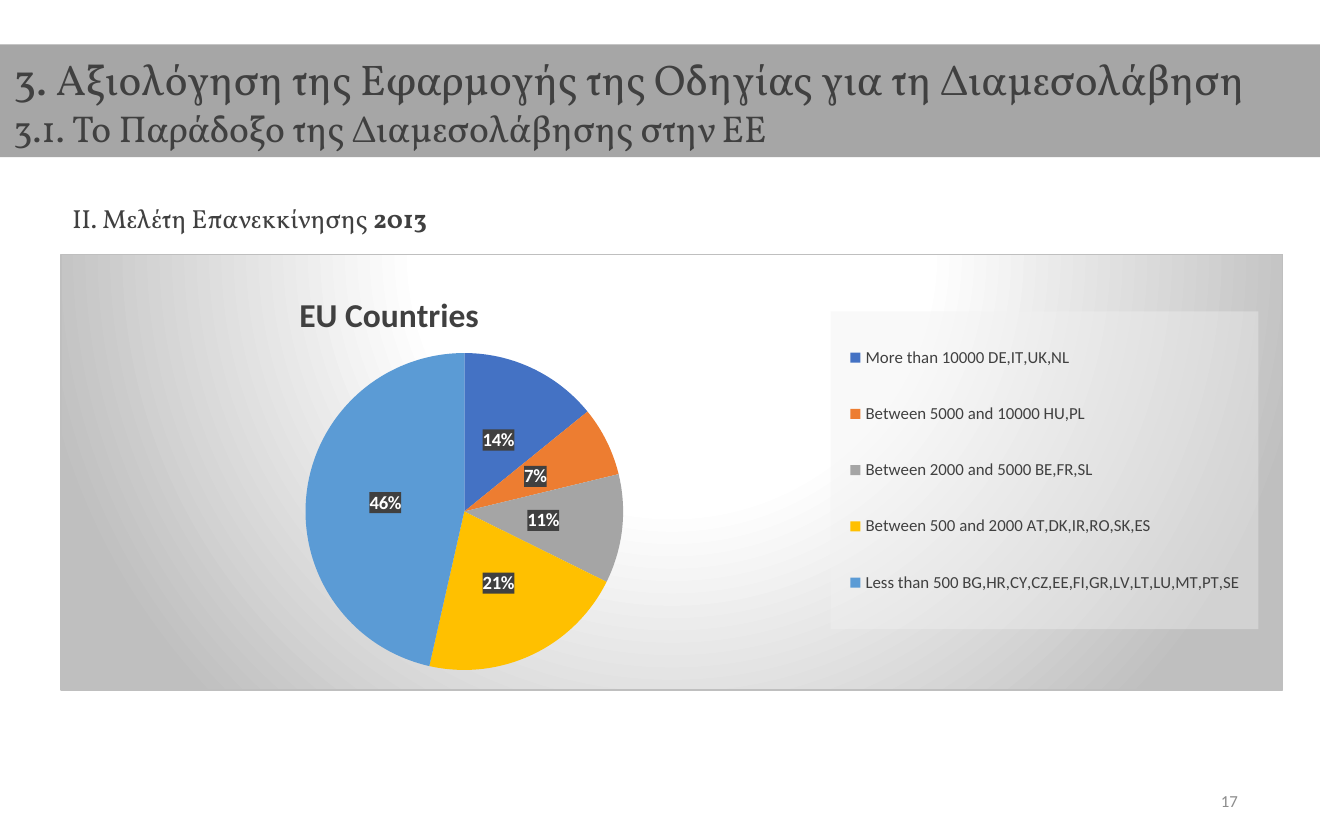
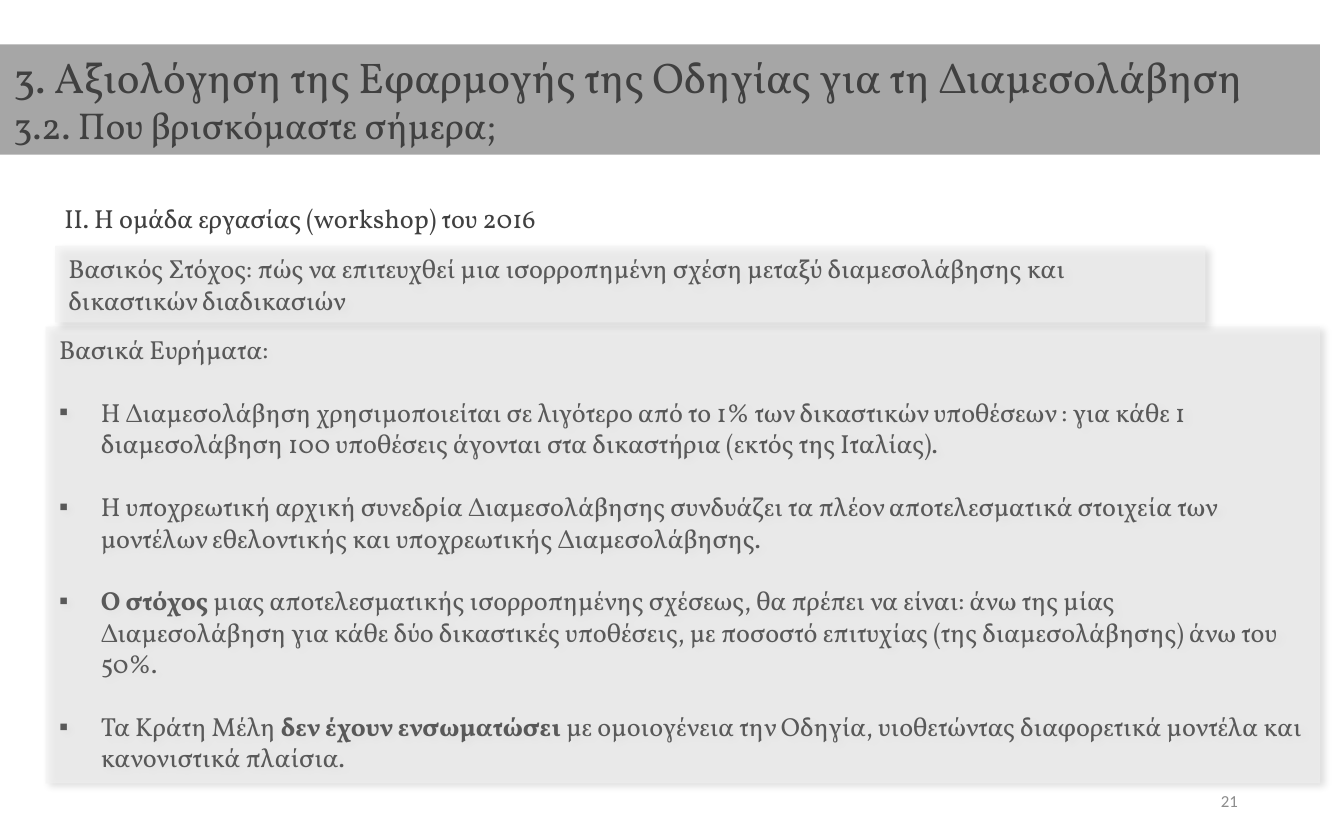
"""Build two slides on how the mediation directive is applied."""
from lxml import etree
from pptx import Presentation
from pptx import util as u
from pptx.chart.data import CategoryChartData
from pptx.dml.color import RGBColor
from pptx.enum import chart as charts, shapes, text
from pptx.oxml import ns

SERIF, SANS = "Vollkorn", "Calibri"
DARK, MUTED, BAND, PANEL = "404040", "595959", "A6A6A6", "F2F2F2"
NUMBER_GREY, BORDER, WHITE = "8C8C8C", "BFBFBF", "FFFFFF"
SLICE_COLOURS = ["4472C4", "ED7D31", "A5A5A5", "FFC000", "5B9BD5"]
HEADING = "Αξιολόγηση της Εφαρμογής της Οδηγίας για τη Διαμεσολάβηση"
TITLE = {"name": SERIF, "size": 23, "colour": DARK}
SUBTITLE = {"size": 20}
LABEL = {"name": SERIF, "size": 14, "colour": DARK}
BODY = {"name": SERIF, "size": 14, "colour": MUTED}
NUMBER = {"name": SANS, "size": 9, "colour": NUMBER_GREY}
BOLD = {"bold": True}
BULLET_INDENT = u.Inches(0.31)
LINE_GAP = u.Pt(16.9)


def colour(value):
    """Turn a hex string into a colour."""
    return RGBColor.from_string(value)


def set_all(target, values):
    """Set every attribute named in a dict."""
    for name, value in values.items():
        setattr(target, name, value)


def set_font(font, style):
    """Apply a style dict to a font."""
    values = dict(style)
    if "colour" in values:
        font.color.rgb = colour(values.pop("colour"))
    if "size" in values:
        values["size"] = u.Pt(values["size"])
    set_all(font, values)


def xml(markup):
    """Build an element from markup that uses the a: and c: prefixes."""
    root = f'<root {ns.nsdecls("a", "c")}>{markup}</root>'
    return etree.fromstring(root)[0]


def solid(value, alpha):
    """Return a see-through solid fill as markup."""
    return (f'<a:solidFill><a:srgbClr val="{value}"><a:alpha val="{alpha * 1000}"/>'
            '</a:srgbClr></a:solidFill>')


def paint(element, markup):
    """Give a chart part its shape properties."""
    properties = xml(f"<c:spPr>{markup}</c:spPr>")
    element.find(ns.qn("c:txPr")).addprevious(properties)


def lay_out(element, index, inner="", **fractions):
    """Place a chart part by fractions of the chart."""
    for previous in element.findall(ns.qn("c:layout")):
        element.remove(previous)
    modes = "".join(f'<c:{axis}Mode val="edge"/>' for axis in "xy")
    values = "".join(f'<c:{key} val="{value}"/>' for key, value in fractions.items())
    element.insert(index, xml(
        f"<c:layout><c:manualLayout>{inner}{modes}{values}</c:manualLayout></c:layout>"))


class Deck:
    """Hold the shared style and the current slide."""

    def __init__(self):
        """Start an empty presentation."""
        self.presentation = Presentation()
        set_all(self.presentation, {"slide_width": u.Inches(10), "slide_height": u.Inches(6.25)})
        self.slide = None

    def start(self, layout, number, title_runs, subtitle, band_height):
        """Add a slide with its title band and number."""
        self.slide = self.presentation.slides.add_slide(
            self.presentation.slide_layouts[layout])
        band = self.slide.shapes.title
        self.place(band, 0, 0.33, 9.82, band_height)
        band.fill.solid()
        band.fill.fore_color.rgb = colour(BAND)
        self.add_text(band, [title_runs, [(subtitle, SUBTITLE)]], TITLE)
        self.label([[(str(number), {})]], (7.06, 5.79, 2.25, 0.33), NUMBER,
                   align=text.PP_ALIGN.RIGHT, anchor=text.MSO_ANCHOR.MIDDLE)

    def place(self, shape, left, top, width, height):
        """Move and size a shape, in inches."""
        set_all(shape, {"left": u.Inches(left), "top": u.Inches(top),
                        "width": u.Inches(width), "height": u.Inches(height)})

    def add_text(self, shape, paragraphs, style, align=text.PP_ALIGN.LEFT,
                 anchor=text.MSO_ANCHOR.TOP, bullets_from=None):
        """Fill a shape with paragraphs of styled runs."""
        frame = shape.text_frame
        set_all(frame, {"word_wrap": True, "auto_size": text.MSO_AUTO_SIZE.NONE,
                        "vertical_anchor": anchor})
        for index, runs in enumerate(paragraphs):
            paragraph = frame.add_paragraph() if index else frame.paragraphs[0]
            bulleted = bullets_from is not None and index >= bullets_from
            set_all(paragraph, {"alignment": align, "line_spacing": 1.0, "space_after": u.Pt(0),
                                "space_before": LINE_GAP if bulleted else u.Pt(0)})
            self.mark(paragraph, bulleted)
            for words, changes in runs:
                run = paragraph.add_run()
                run.text = words
                set_font(run.font, {**style, **changes})

    def mark(self, paragraph, bulleted):
        """Set the bullet and hanging indent of a paragraph."""
        properties = paragraph._p.get_or_add_pPr()
        indent = BULLET_INDENT if bulleted else 0
        properties.set("marL", str(indent))
        properties.set("indent", str(-indent))
        if bulleted:
            properties.append(xml('<a:buFont typeface="Arial"/>'))
            properties.append(xml('<a:buChar char="▪"/>'))
        else:
            properties.append(xml("<a:buNone/>"))

    def label(self, paragraphs, box, style, **options):
        """Add plain text."""
        shape = self.slide.shapes.add_textbox(*map(u.Inches, box))
        self.add_text(shape, paragraphs, style, **options)

    def panel(self, shape, paragraphs, **options):
        """Turn a shape into a pale panel with a soft shadow."""
        shape.shadow.inherit = False
        shape.fill.solid()
        shape.fill.fore_color.rgb = colour(PANEL)
        shape.line.fill.background()
        properties = shape._element.spPr
        properties.find(ns.qn("a:solidFill"))[0].append(xml('<a:alpha val="59000"/>'))
        properties.find(ns.qn("a:effectLst")).append(xml(
            f'<a:outerShdw blurRad="{u.Pt(4)}" dist="{u.Pt(3)}" dir="2700000" '
            'algn="tl" rotWithShape="0"><a:srgbClr val="000000"><a:alpha val="22000"/>'
            "</a:srgbClr></a:outerShdw>"))
        self.add_text(shape, paragraphs, BODY, **options)

    def rectangle(self, box):
        """Add a rectangle."""
        return self.slide.shapes.add_shape(shapes.MSO_SHAPE.RECTANGLE, *map(u.Inches, box))

    def pie(self, name, shares, box):
        """Add a pie chart with percent labels and a legend."""
        data = CategoryChartData()
        data.categories = list(shares)
        data.add_series(name, list(shares.values()))
        chart = self.slide.shapes.add_chart(
            charts.XL_CHART_TYPE.PIE, *map(u.Inches, box), data).chart
        set_font(chart.font, {"name": SANS, "size": 10, "colour": "000000"})
        self.chart_title(chart, name)
        self.chart_legend(chart)
        self.chart_slices(chart.plots[0])
        lay_out(chart._chartSpace.chart.plotArea, 0, '<c:layoutTarget val="inner"/>',
                x=0.2, y=0.22, w=0.26, h=0.74)
        stops = "".join(f'<a:gs pos="{position * 1000}"><a:srgbClr val="{value}"/></a:gs>'
                        for position, value in ((0, WHITE), (39, WHITE), (100, BORDER)))
        paint(chart._chartSpace,
              f'<a:gradFill><a:gsLst>{stops}</a:gsLst><a:path path="circle">'
              '<a:fillToRect l="50000" t="-80000" r="50000" b="180000"/></a:path></a:gradFill>'
              f'<a:ln w="{u.Pt(0.75)}"><a:solidFill><a:srgbClr val="{BORDER}"/>'
              "</a:solidFill></a:ln>")

    def chart_title(self, chart, name):
        """Set and place the chart title."""
        chart.has_title = True
        title = chart.chart_title
        title.text_frame.text = name
        set_font(title.text_frame.paragraphs[0].runs[0].font,
                 {"name": SANS, "size": 18, "colour": DARK, **BOLD})
        lay_out(title._element, 1, x=0.19, y=0.07)

    def chart_legend(self, chart):
        """Format and place the legend."""
        chart.has_legend = True
        legend = chart.legend
        set_all(legend, {"position": charts.XL_LEGEND_POSITION.RIGHT,
                         "include_in_layout": False})
        set_font(legend.font, {"name": SANS, "size": 9, "colour": DARK})
        paint(legend._element, solid(PANEL, 39))
        lay_out(legend._element, 1, x=0.63, y=0.13, w=0.35, h=0.73)

    def chart_slices(self, plot):
        """Colour and label the slices."""
        plot.vary_by_categories = True
        for index, value in enumerate(SLICE_COLOURS):
            fill = plot.series[0].points[index].format.fill
            fill.solid()
            fill.fore_color.rgb = colour(value)
        plot.has_data_labels = True
        labels = plot.data_labels
        set_all(labels, {"show_percentage": True, "show_value": False,
                         "number_format": "0%", "number_format_is_linked": False,
                         "position": charts.XL_LABEL_POSITION.CENTER})
        set_font(labels.font, {"name": SANS, "size": 10, "colour": WHITE, **BOLD})
        paint(labels._element, solid(DARK, 85))


def build_study(deck):
    """Build the slide on the 2013 study."""
    deck.start(5, 17, [("3. ", {"size": 24}), (HEADING, {})],
               "3.1. Το Παράδοξο της Διαμεσολάβησης στην ΕΕ", 0.84)
    deck.label([[("II. Μελέτη Επανεκκίνησης ", {}), ("2013", BOLD)]],
               (0.44, 1.46, 5.58, 0.34), LABEL)
    deck.pie("EU Countries", {
        "More than 10000 DE,IT,UK,NL": 14,
        "Between 5000 and 10000 HU,PL": 7,
        "Between 2000 and 5000 BE,FR,SL": 11,
        "Between 500 and 2000 AT,DK,IR,RO,SK,ES": 21,
        "Less than 500 BG,HR,CY,CZ,EE,FI,GR,LV,LT,LU,MT,PT,SE": 46,
    }, (0.45, 1.89, 9.1, 3.25))


def build_workshop(deck):
    """Build the slide on the 2016 workshop."""
    deck.start(1, 21, [("3. " + HEADING, {})], "3.2. Που βρισκόμαστε σήμερα;", 0.82)
    deck.label([[("II. Η ομάδα εργασίας (workshop) του 2016", {})]],
               (0.38, 1.46, 4.22, 0.34), LABEL)
    findings = deck.slide.placeholders[1]
    deck.place(findings, 0.34, 2.43, 9.48, 3.4)
    deck.panel(findings, [
        [("Βασικά Ευρήματα:", {})],
        [("Η Διαμεσολάβηση χρησιμοποιείται σε λιγότερο από το 1% των δικαστικών υποθέσεων : "
          "για κάθε 1 διαμεσολάβηση 100 υποθέσεις άγονται στα δικαστήρια "
          "(εκτός της Ιταλίας).", {})],
        [("Η υποχρεωτική αρχική συνεδρία Διαμεσολάβησης συνδυάζει τα πλέον αποτελεσματικά "
          "στοιχεία των μοντέλων εθελοντικής και υποχρεωτικής Διαμεσολάβησης.", {})],
        [("Ο στόχος ", BOLD),
         ("μιας αποτελεσματικής ισορροπημένης σχέσεως, θα πρέπει να είναι: άνω της μίας "
          "Διαμεσολάβηση για κάθε δύο δικαστικές υποθέσεις, με ποσοστό επιτυχίας "
          "(της διαμεσολάβησης) άνω του 50%.", {})],
        [("Τα Κράτη Μέλη ", {}), ("δεν έχουν ενσωματώσει ", BOLD),
         ("με ομοιογένεια την Οδηγία, υιοθετώντας διαφορετικά μοντέλα και "
          "κανονιστικά πλαίσια.", {})],
    ], bullets_from=1)
    deck.panel(deck.rectangle((0.41, 1.83, 8.56, 0.57)), [
        [("Βασικός Στόχος: πώς να επιτευχθεί μια ισορροπημένη σχέση μεταξύ "
          "διαμεσολάβησης και δικαστικών διαδικασιών", {})]])


def main():
    """Build and save the presentation."""
    deck = Deck()
    build_study(deck)
    build_workshop(deck)
    deck.presentation.save("out.pptx")


if __name__ == "__main__":
    main()
